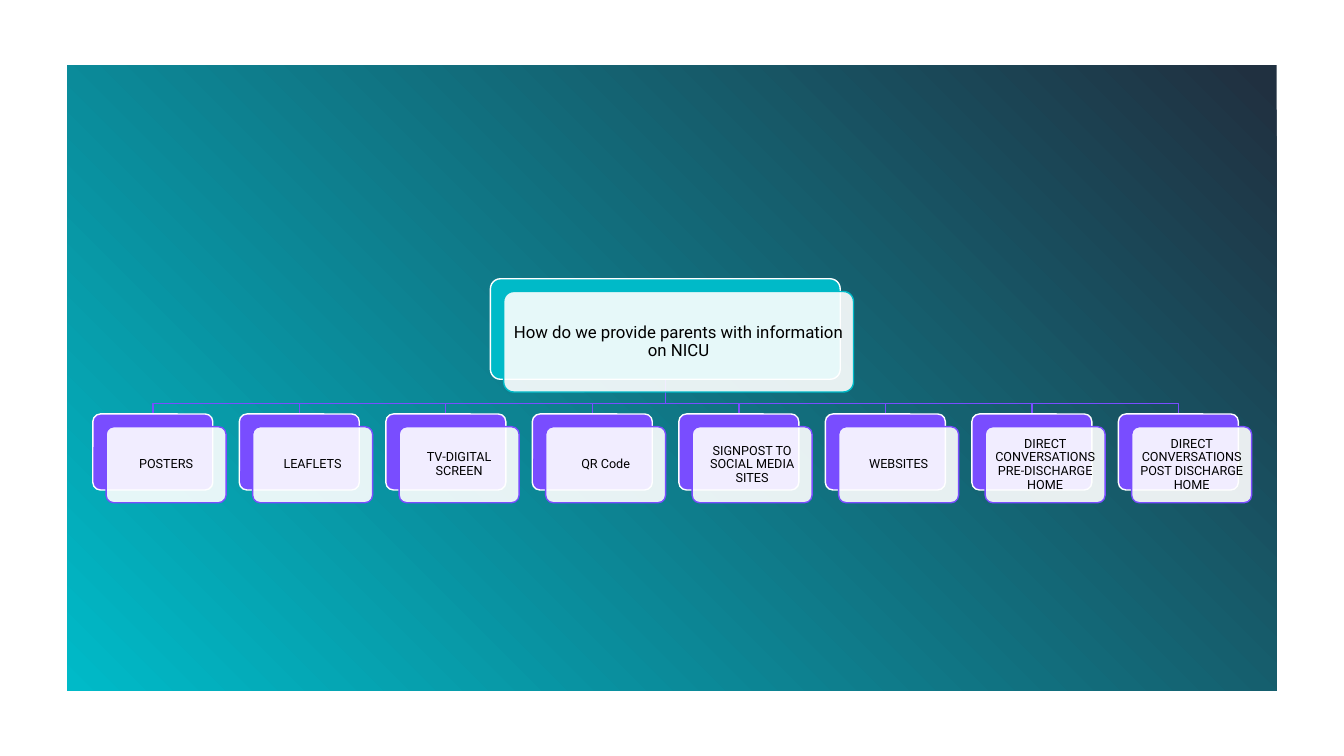
from lxml import etree
from pptx import Presentation
from pptx import util as u
from pptx.dml.color import RGBColor
from pptx.enum import shapes, text
from pptx.oxml.ns import qn

COLOURS = {
    "navy": "203040",
    "teal": "00BAC8",
    "violet": "794DFF",
    "white": "FFFFFF",
    "black": "000000",
}
QUESTION = "How do we provide parents with information on NICU"
CHANNELS = [
    "POSTERS",
    "LEAFLETS",
    "TV-DIGITAL SCREEN",
    "QR Code",
    "SIGNPOST TO SOCIAL MEDIA SITES",
    "WEBSITES",
    "DIRECT CONVERSATIONS PRE-DISCHARGE HOME",
    "DIRECT CONVERSATIONS POST DISCHARGE HOME",
]
PANEL = (48, 46.8, 864, 446.4)
ROOT = (350.3, 199.1, 249.9, 71.8)
LEAF = (66.3, 295.7, 85.7, 54.3)
PITCH = 104.65
BRANCH_Y = 288
OFFSET_X, OFFSET_Y = 9.5, 9.1


def colour(name):
    return RGBColor.from_string(COLOURS[name])


def write(card, wording, size, inset, font="Roboto", ink="black"):
    frame = card.text_frame
    frame.word_wrap = True
    frame.vertical_anchor = text.MSO_ANCHOR.MIDDLE
    frame.margin_left = frame.margin_right = u.Pt(inset)
    frame.margin_top = frame.margin_bottom = u.Pt(inset)
    line = frame.paragraphs[0]
    line.alignment = text.PP_ALIGN.CENTER
    line.line_spacing = 0.9
    run = line.add_run()
    run.text = wording
    run.font.name = font
    run.font.size = u.Pt(size)
    run.font.color.rgb = colour(ink)


def draw_panel(slide, box):
    panel = slide.shapes.add_shape(shapes.MSO_SHAPE.RECTANGLE, *map(u.Pt, box))
    panel.shadow.inherit = False
    panel.line.fill.background()
    panel.fill.gradient()
    panel.fill.gradient_angle = 225
    for stop, name, position in zip(panel.fill.gradient_stops, ("navy", "teal"), (0.01, 1)):
        stop.color.rgb = colour(name)
        stop.position = position


def draw_plate(slide, box, fill, outline):
    plate = slide.shapes.add_shape(shapes.MSO_SHAPE.ROUNDED_RECTANGLE, *map(u.Pt, box))
    plate.adjustments[0] = 0.1
    plate.shadow.inherit = False
    plate.fill.solid()
    plate.fill.fore_color.rgb = colour(fill)
    plate.line.color.rgb = colour(outline)
    plate.line.width = u.Pt(1)
    return plate


def draw_card(slide, box, accent, wording, size, inset):
    left, top, width, height = box
    draw_plate(slide, box, accent, "white")
    front = draw_plate(slide, (left + OFFSET_X, top + OFFSET_Y, width, height), "white", accent)
    tint = front.fill._xPr.find(qn("a:solidFill"))[0]
    etree.SubElement(tint, qn("a:alpha"), val="90000")
    write(front, wording, size, inset)


def draw_branch(slide, root, leaf):
    start_x, start_y = root[0] + root[2] / 2, root[1] + root[3]
    end_x, end_y = leaf[0] + leaf[2] / 2, leaf[1]
    outline = slide.shapes.build_freeform(u.Pt(start_x), u.Pt(start_y))
    bends = [(start_x, BRANCH_Y), (end_x, BRANCH_Y), (end_x, end_y)]
    outline.add_line_segments([(u.Pt(x), u.Pt(y)) for x, y in bends], close=False)
    branch = outline.convert_to_shape()
    branch.shadow.inherit = False
    branch.fill.background()
    branch.line.color.rgb = colour("violet")
    branch.line.width = u.Pt(1)


def draw_tree(slide, root, first_leaf):
    left, top, width, height = first_leaf
    leaves = [(left + i * PITCH, top, width, height) for i in range(len(CHANNELS))]
    for leaf in reversed(leaves):
        draw_branch(slide, root, leaf)
    draw_card(slide, root, "teal", QUESTION, size=12, inset=3.6)
    for leaf, channel in zip(leaves, CHANNELS):
        draw_card(slide, leaf, "violet", channel, size=9, inset=2.7)


def main():
    deck = Presentation()
    deck.slide_width, deck.slide_height = u.Pt(960), u.Pt(540)
    slide = deck.slides.add_slide(deck.slide_layouts[6])
    draw_panel(slide, PANEL)
    draw_tree(slide, ROOT, LEAF)
    deck.save("out.pptx")


if __name__ == "__main__":
    main()
